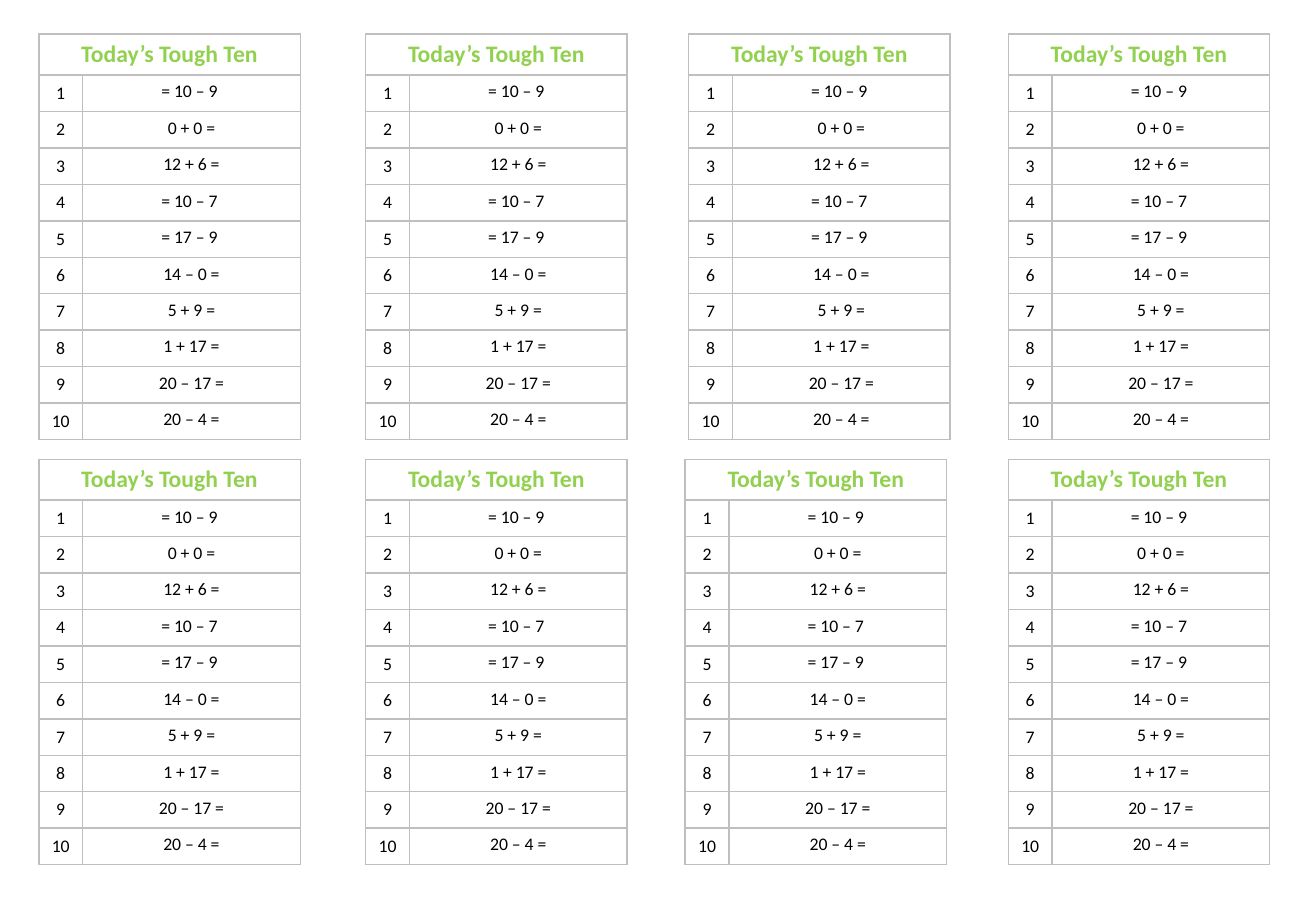
from dataclasses import dataclass

from lxml.etree import SubElement
from pptx import Presentation
from pptx.dml.color import RGBColor
from pptx.enum.text import MSO_ANCHOR as Anchor, PP_ALIGN as Align
from pptx.oxml.ns import qn
from pptx.util import Pt

HEADING = "Today’s Tough Ten"
SUMS = ("= 10 – 9 ", "0 + 0 =", "12 + 6 =", "= 10 – 7 ", "= 17 – 9 ",
        "14 – 0 =", "5 + 9 =", "1 + 17 =", "20 – 17 =", "20 – 4 =")
COL_WIDTHS = (26, 129)
HEADING_HEIGHT, SUM_HEIGHT, CARD_HEIGHT = 18, 21.6, 240
GREEN, BLACK, GREY = "92D050", "000000", "BFBFBF"


@dataclass(frozen=True)
class Card:
    left: float
    top: float


TOP, BOTTOM = 20.2, 272.2
CARDS = [
    Card(23, TOP), Card(23, BOTTOM),
    Card(216.7, TOP), Card(216.7, BOTTOM),
    Card(408.2, TOP), Card(406.1, BOTTOM),
    Card(597.6, TOP), Card(597.6, BOTTOM),
]


def add_line(parent, tag: str, color: str, width: float) -> None:
    """Add a solid line element, as used by cell borders and text outlines."""
    ln = SubElement(parent, qn(tag), w=str(Pt(width)))
    fill = SubElement(ln, qn("a:solidFill"))
    SubElement(fill, qn("a:srgbClr"), val=color)


def write(cell, text: str, *, size: float = 10.5, color: str = BLACK,
          bold: bool = False, outline: float = 0,
          anchor: Anchor = Anchor.TOP) -> None:
    cell.vertical_anchor = anchor
    p = cell.text_frame.paragraphs[0]
    p.alignment = Align.CENTER
    r = p.add_run()
    r.text = text
    if outline:
        add_line(r.font._element, "a:ln", BLACK, outline)
    r.font.name = "Calibri"
    r.font.size = Pt(size)
    r.font.bold = bold
    r.font.color.rgb = RGBColor.from_string(color)


def style_cell(cell) -> None:
    """Give the cell grey borders and no fill."""
    tc_pr = cell._tc.get_or_add_tcPr()
    for side in "LRTB":
        add_line(tc_pr, f"a:ln{side}", GREY, 1)
    cell.fill.background()


def add_card(s, card: Card) -> None:
    frame = s.shapes.add_table(
        len(SUMS) + 1, len(COL_WIDTHS), Pt(card.left), Pt(card.top),
        Pt(sum(COL_WIDTHS)), Pt(CARD_HEIGHT))
    table = frame.table
    table.first_row = table.horz_banding = False
    for col, width in zip(table.columns, COL_WIDTHS):
        col.width = Pt(width)
    for i, row in enumerate(table.rows):
        row.height = Pt(SUM_HEIGHT if i else HEADING_HEIGHT)
    frame.height = Pt(CARD_HEIGHT)
    for cell in table.iter_cells():
        style_cell(cell)

    table.cell(0, 0).merge(table.cell(0, 1))
    write(table.cell(0, 0), HEADING, size=14, color=GREEN, bold=True,
          outline=0.25)
    for i, text in enumerate(SUMS, start=1):
        write(table.cell(i, 0), str(i), anchor=Anchor.MIDDLE)
        write(table.cell(i, 1), text)


def main() -> None:
    prs = Presentation()
    prs.slide_width, prs.slide_height = Pt(780), Pt(540)
    s = prs.slides.add_slide(prs.slide_layouts[6])
    for card in CARDS:
        add_card(s, card)
    prs.save("out.pptx")


if __name__ == "__main__":
    main()
